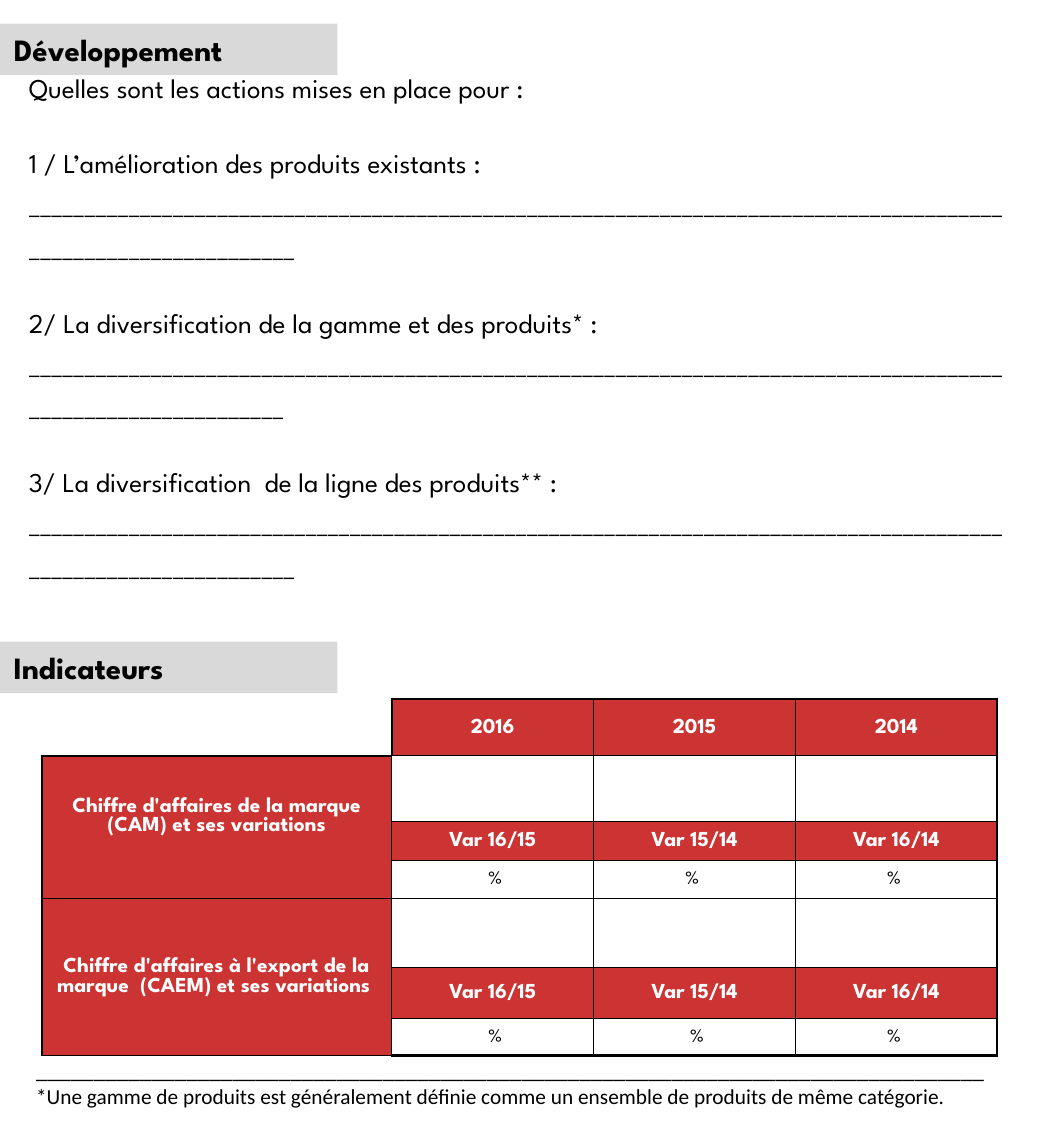
from lxml.etree import SubElement
from pptx import Presentation
from pptx.dml.color import RGBColor
from pptx.enum.shapes import MSO_SHAPE
from pptx.enum.text import MSO_ANCHOR, PP_ALIGN
from pptx.oxml.ns import qn
from pptx.util import Pt

FONT, NOTE_FONT = "League Spartan", "Calibri"
BLACK, WHITE, RED, GREY = "000000", "FFFFFF", "CC3333", "D9D9D9"

TITLE, SUBTITLE = "Développement", "Indicateurs"
INTRO = "Quelles sont les actions mises en place pour :"
QUESTIONS = [  # wording, length of the answer line
    ("1 / L’amélioration des produits existants\u00a0: ", 112),
    ("2/ La diversification de la gamme et des produits* : ", 111),
    ("3/ La diversification  de la ligne des produits** : ", 112),
]
VARIATIONS = ["Var 16/15", "Var 15/14", "Var 16/14"]
ROWS = [
    ["", "2016", "2015", "2014"],
    ["Chiffre d'affaires de la marque (CAM) et ses variations", "", "", ""],
    ["", *VARIATIONS],
    ["", "\u00a0%", "%\u00a0", "%\u00a0"],
    ["Chiffre d'affaires à l'export de la marque  (CAEM) et ses variations ", "", "", ""],
    ["", *VARIATIONS],
    ["", "\u00a0%", "\u00a0%", "%\u00a0"],
]
COL_WIDTHS = [180.7, 104.2, 104.2, 104.2]
ROW_HEIGHTS = [29.4, 33.8, 20.2, 19.6, 35.6, 26.2, 19.4]
GROUP_STARTS, GROUP_SIZE = (1, 4), 3
RED_ROWS = (0, 2, 5)
NOTE = [
    ("_" * 82, 12),
    ("*Une gamme de produits est généralement définie comme un ensemble de produits de même catégorie.", 11),
]


def rgb(color):
    return RGBColor.from_string(color)


def style(p, size, color=BLACK, bold=False, font=FONT, align=PP_ALIGN.LEFT):
    p.alignment = align
    for r in p.runs:
        r.font.name, r.font.size, r.font.bold = font, Pt(size), bold
        r.font.color.rgb = rgb(color)


def format_band(s, text, top):
    s.left, s.top, s.width, s.height = Pt(0), Pt(top), Pt(174.2), Pt(26.6)
    s.fill.solid()
    s.fill.fore_color.rgb = rgb(GREY)
    s.line.fill.background()
    tf = s.text_frame
    tf.text = text
    tf.word_wrap = True
    tf.vertical_anchor = MSO_ANCHOR.TOP
    style(tf.paragraphs[0], 16, bold=True)


def add_text(slide, left, top, width, height, lines):
    tf = slide.shapes.add_textbox(Pt(left), Pt(top), Pt(width), Pt(height)).text_frame
    tf.word_wrap = True
    tf.text = "\n".join(lines)
    return tf


def border_widths(row, col):
    """Widths of the left, right, top and bottom borders; 0 for none."""
    corner = row == col == 0
    thick = (
        col == 0 or (row, col) == (0, 1),
        col == len(COL_WIDTHS) - 1 or corner,
        row == 0 or (row, col) == (1, 0),
        row == len(ROWS) - 1 or corner,
    )
    widths = [1.5 if t else 0.5 for t in thick]
    return [0, widths[1], 0, widths[3]] if corner else widths


def set_borders(cell, widths):
    tc_pr = cell._tc.get_or_add_tcPr()
    for i, (side, width) in enumerate(zip("LRTB", widths)):
        ln = SubElement(tc_pr, qn(f"a:ln{side}"), w=str(Pt(width)))
        if width:
            fill = SubElement(ln, qn("a:solidFill"))
            SubElement(fill, qn("a:srgbClr"), val=BLACK)
        else:
            SubElement(ln, qn("a:noFill"))
        tc_pr.insert(i, ln)


def add_indicators(slide):
    table = slide.shapes.add_table(
        len(ROWS), len(COL_WIDTHS), Pt(21.6), Pt(360.7),
        Pt(sum(COL_WIDTHS)), Pt(sum(ROW_HEIGHTS))).table
    table.first_row = table.horz_banding = False
    for col, width in zip(table.columns, COL_WIDTHS):
        col.width = Pt(width)
    for row, height in zip(table.rows, ROW_HEIGHTS):
        row.height = Pt(height)
    for start in GROUP_STARTS:
        table.cell(start, 0).merge(table.cell(start + GROUP_SIZE - 1, 0))

    for i, texts in enumerate(ROWS):
        for j, text in enumerate(texts):
            cell = table.cell(i, j)
            red = i in RED_ROWS if j else i > 0
            if red:
                cell.fill.solid()
                cell.fill.fore_color.rgb = rgb(RED)
            else:
                cell.fill.background()
            cell.margin_left = cell.margin_right = cell.margin_top = Pt(0.7)
            cell.margin_bottom = Pt(0)
            cell.vertical_anchor = MSO_ANCHOR.MIDDLE
            if text:
                cell.text = text
                style(cell.text_frame.paragraphs[0], 11 if red else 10,
                      WHITE if red else BLACK, red, align=PP_ALIGN.CENTER)
            set_borders(cell, border_widths(i, j))
    table.cell(GROUP_STARTS[0], 0).margin_bottom = Pt(11)


def main():
    prs = Presentation()
    prs.slide_width, prs.slide_height = Pt(540), Pt(592.56)
    slide = prs.slides.add_slide(prs.slide_layouts[5])

    format_band(slide.shapes.title, TITLE, 12.2)
    band = slide.shapes.add_shape(MSO_SHAPE.RECTANGLE, 0, 0, 0, 0)
    band.shadow.inherit = False
    format_band(band, SUBTITLE, 331.2)

    add_indicators(slide)

    tf = add_text(slide, 11.5, 541.4, 507.6, 35.3, [text for text, _ in NOTE])
    for p, (_, size) in zip(tf.paragraphs, NOTE):
        style(p, size, font=NOTE_FONT)

    lines = [INTRO] + [text + "_" * count for text, count in QUESTIONS]
    tf = add_text(slide, 7.9, 52.6, 521.3, 227.5, lines)
    tf.vertical_anchor = MSO_ANCHOR.MIDDLE
    for i, p in enumerate(tf.paragraphs):
        style(p, 14)
        p.line_spacing = 1.3
        p.space_before = Pt(16.8 if i else 0)

    prs.save("out.pptx")


if __name__ == "__main__":
    main()
